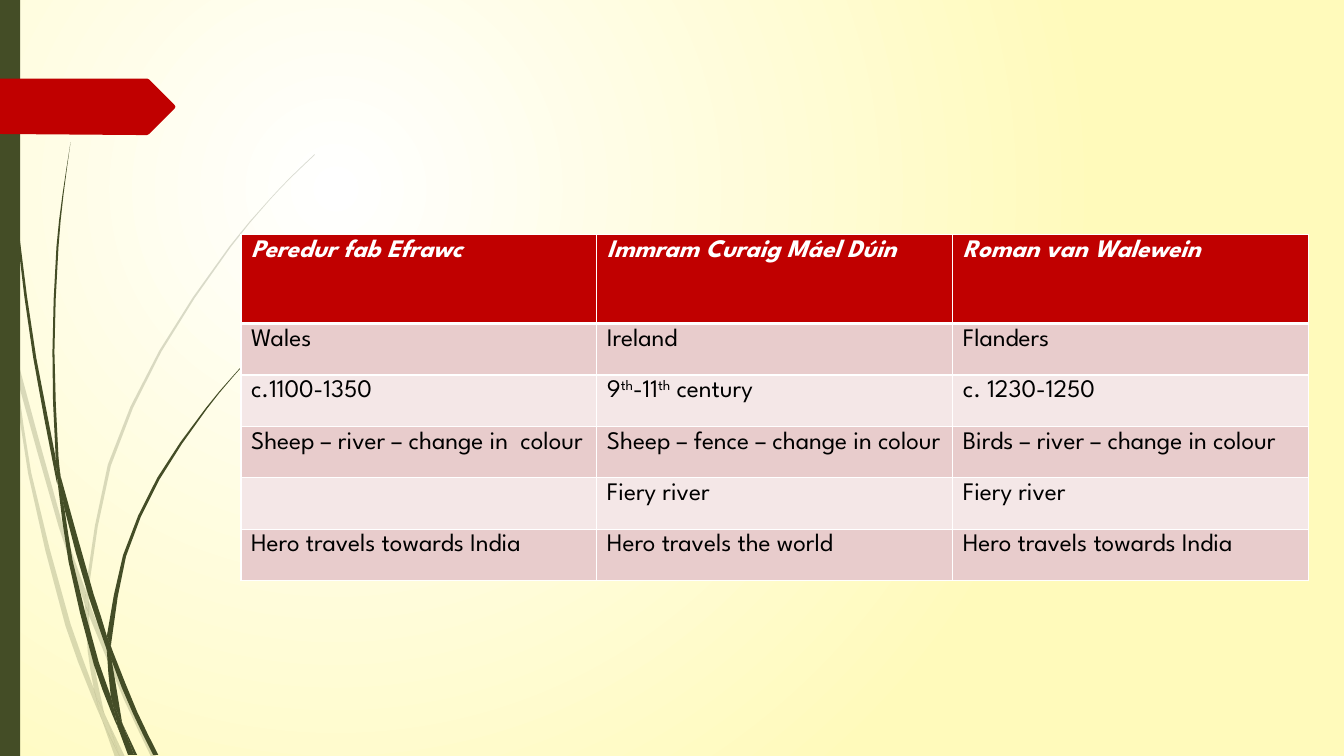
from math import dist
from lxml.etree import SubElement
from pptx import Presentation
from pptx.dml.color import RGBColor
from pptx.enum.shapes import MSO_SHAPE
from pptx.oxml import parse_xml
from pptx.oxml.ns import nsdecls, qn
from pptx.util import Pt

PX = 9144
CURVE_STEPS = 2
OLIVE, RED, WHITE, BLACK = "444D26", "C00000", "FFFFFF", "000000"
BAND_FILLS = ["E8CCCC", "F4E7E7"]
HEADER_FONT = {"name": "League Spartan", "size": Pt(18), "bold": True, "italic": True}
BODY_FONT = {"name": "League Spartan", "size": Pt(18), "bold": False, "italic": False}

PALE_BLADES = [
    ([(0, 282), (9, 322), (11, 350)], [(0, 299), (10, 344), (11, 350)]),
    ([(14, 345), (62, 520), (85, 586)], [(17, 376), (58, 522), (84, 599)]),
    ([(88, 596), (92, 607), (127, 692), (155, 751)], [(88, 610), (123, 694), (150, 751)]),
    ([(105, 711), (124, 751)], [(105, 711), (119, 751)]),
    ([(11, 350), (17, 376), (31, 469), (70, 619), (93, 683), (99, 707), (101, 714)],
     [(11, 350), (28, 470), (65, 621), (92, 693), (101, 714)]),
    ([(84, 599), (88, 608), (91, 646), (103, 706), (105, 711)],
     [(84, 599), (87, 646), (93, 683), (96, 692), (105, 711)]),
    ([(312, 153), (289, 175), (268, 197), (228, 244), (158, 348), (107, 461), (85, 584)],
     [(312, 154), (290, 175), (268, 198), (229, 245), (160, 349), (110, 462), (88, 584),
      (88, 596)]),
    ([(101, 714), (119, 751)], [(101, 714), (114, 751)]),
    ([(85, 586), (88, 596), (88, 610)], [(85, 586), (84, 599), (88, 608)]),
    ([(93, 683), (96, 692), (105, 711), (119, 751)],
     [(93, 683), (99, 707), (101, 714), (119, 751)]),
]
DARK_BLADES = [
    ([(4, 0), (5, 48), (8, 109), (19, 232), (36, 355), (55, 453), (57, 481)],
     [(3, 0), (4, 48), (7, 110), (17, 233), (33, 355), (56, 477)]),
    ([(60, 472), (93, 590), (106, 631), (106, 645)], [(60, 472), (64, 505), (88, 592), (106, 645)]),
    ([(110, 641), (113, 649), (136, 706), (157, 749)], [(110, 641), (111, 656), (132, 708), (152, 749)]),
    ([(57, 477), (64, 505), (72, 556), (98, 657), (110, 691), (117, 722)],
     [(57, 477), (68, 557), (93, 659), (111, 708), (117, 722)]),
    ([(70, 141), (63, 193), (58, 245), (54, 349), (58, 453), (60, 472)],
     [(70, 141), (62, 193), (56, 245), (52, 349), (55, 449), (60, 472)]),
    ([(122, 719), (136, 749)], [(122, 719), (133, 749)]),
    ([(55, 449), (60, 472), (64, 505)], [(55, 449), (57, 477), (64, 505)]),
    ([(260, 344), (245, 358), (231, 373), (204, 405), (156, 474), (122, 551), (106, 631)],
     [(261, 344), (245, 359), (231, 374), (205, 406), (158, 476), (125, 552), (111, 633),
      (110, 641)]),
    ([(117, 722), (131, 749)], [(117, 722), (127, 749)]),
    ([(106, 645), (109, 651), (111, 656), (121, 716), (122, 719)],
     [(106, 645), (110, 691), (116, 706), (122, 719)]),
    ([(106, 631), (110, 641), (111, 656)], [(106, 631), (106, 645), (111, 656)]),
    ([(110, 691), (116, 706), (122, 719), (133, 749)],
     [(110, 691), (116, 717), (117, 722), (130, 749)]),
]
POINTER = [(173, 108), (148, 133), (146, 134), (136, 134), (0, 133), (0, 78), (136, 78),
           (146, 78), (148, 79), (173, 104), (174, 106)]
TABLE_TEXT = [
    ["Peredur fab Efrawc", "Immram Curaig Máel Dúin", "Roman van Walewein"],
    ["Wales", "Ireland", "Flanders"],
    ["c.1100-1350", "9^th^-11^th^ century", "c. 1230-1250"],
    ["Sheep – river – change in  colour", "Sheep – fence – change in colour",
     "Birds – river – change in colour"],
    ["", "Fiery river", "Fiery river"],
    ["Hero travels towards India", "Hero travels the world", "Hero travels towards India"],
]


def color(value):
    return RGBColor.from_string(value)


def paint(shape, fill, opacity=100):
    shape.shadow.inherit = False
    shape.fill.solid()
    shape.fill.fore_color.rgb = color(fill)
    shape.line.fill.background()
    if opacity < 100:
        solid = shape.element.spPr.find(qn("a:solidFill"))
        SubElement(solid[0], qn("a:alpha"), val=str(opacity * 1000))


def set_background(slide):
    fill = slide.background.fill
    fill.gradient()
    for stop, value in zip(fill.gradient_stops, [WHITE, "FFFABB"]):
        stop.color.rgb = color(value)
    gradient = next(slide.element.iter(qn("a:gradFill")))
    direction = gradient.find(qn("a:lin"))
    gradient.replace(direction, parse_xml(
        f'<a:path {nsdecls("a")} path="circle">'
        '<a:fillToRect l="50000" t="50000" r="100000" b="100000"/></a:path>'))


def smooth_curve(points):
    last = len(points) - 1
    if last == 1:
        return points
    lengths = [dist(a, b) for a, b in zip(points, points[1:])]
    slopes = []
    for index in range(last + 1):
        before, after = max(index - 1, 0), min(index + 1, last)
        span = sum(lengths[before:after])
        slopes.append([(b - a) / span for a, b in zip(points[before], points[after])])
    curve = [points[0]]
    for index, length in enumerate(lengths):
        for step in range(1, CURVE_STEPS + 1):
            t = step / CURVE_STEPS
            end_weight = t * t * (3 - 2 * t)
            curve.append(tuple(
                (1 - end_weight) * start + end_weight * end
                + length * (t * (1 - t) ** 2 * leave - t * t * (1 - t) * arrive)
                for start, end, leave, arrive in zip(
                    points[index], points[index + 1], slopes[index], slopes[index + 1])))
    return curve


def add_outline(slide, outline, fill, opacity=100):
    corners = [(round(x * PX), round(y * PX)) for x, y in outline]
    builder = slide.shapes.build_freeform(*corners[0], scale=1.0)
    builder.add_line_segments(corners[1:], close=True)
    paint(builder.convert_to_shape(), fill, opacity)


def add_blade(slide, right_edge, left_edge, opacity):
    outline = smooth_curve(right_edge) + smooth_curve(left_edge)[::-1]
    add_outline(slide, outline, OLIVE, opacity)


def add_side_bar(slide, width, height):
    bar = slide.shapes.add_shape(MSO_SHAPE.RECTANGLE, 0, 0, width * PX, height * PX)
    paint(bar, OLIVE)


def set_borders(cell, widths):
    properties = cell._tc.get_or_add_tcPr()
    for position, (side, width) in enumerate(widths.items()):
        properties.insert(position, parse_xml(
            f'<a:{side} {nsdecls("a")} w="{Pt(width)}"><a:solidFill>'
            f'<a:srgbClr val="{WHITE}"/></a:solidFill></a:{side}>'))


def write_cell(cell, text, font_format, font_color):
    paragraph = cell.text_frame.paragraphs[0]
    for index, part in enumerate(text.split("^") if text else []):
        run = paragraph.add_run()
        run.text = part
        for name, value in font_format.items():
            setattr(run.font, name, value)
        run.font.color.rgb = color(font_color)
        if index % 2:
            run.font._element.set("baseline", "30000")


def add_comparison_table(slide, left, top, column_width, height, header_height, row_height):
    row_count, column_count = len(TABLE_TEXT), len(TABLE_TEXT[0])
    frame = slide.shapes.add_table(
        row_count, column_count, left * PX, top * PX,
        column_width * column_count * PX, height * PX)
    table = frame.table
    for column in table.columns:
        column.width = column_width * PX
    for row_index, texts in enumerate(TABLE_TEXT):
        header = row_index == 0
        table.rows[row_index].height = (header_height if header else row_height) * PX
        for column_index, text in enumerate(texts):
            cell = table.cell(row_index, column_index)
            cell.fill.solid()
            cell.fill.fore_color.rgb = color(RED if header else BAND_FILLS[(row_index - 1) % 2])
            set_borders(cell, {"lnL": 1, "lnR": 1, "lnT": 3 if row_index == 1 else 1,
                               "lnB": 3 if header else 1})
            write_cell(cell, text, HEADER_FONT if header else BODY_FONT,
                       WHITE if header else BLACK)
    frame.height = height * PX


def main():
    presentation = Presentation()
    presentation.slide_width, presentation.slide_height = 1333 * PX, 750 * PX
    slide = presentation.slides.add_slide(presentation.slide_layouts[6])
    set_background(slide)
    for blades, opacity in [(PALE_BLADES, 20), (DARK_BLADES, 100)]:
        for right_edge, left_edge in blades:
            add_blade(slide, right_edge, left_edge, opacity)
    add_side_bar(slide, 20, 750)
    add_outline(slide, POINTER, RED)
    add_comparison_table(slide, 239, 233, 353, 362, 88, 51)
    presentation.save("out.pptx")


if __name__ == "__main__":
    main()
